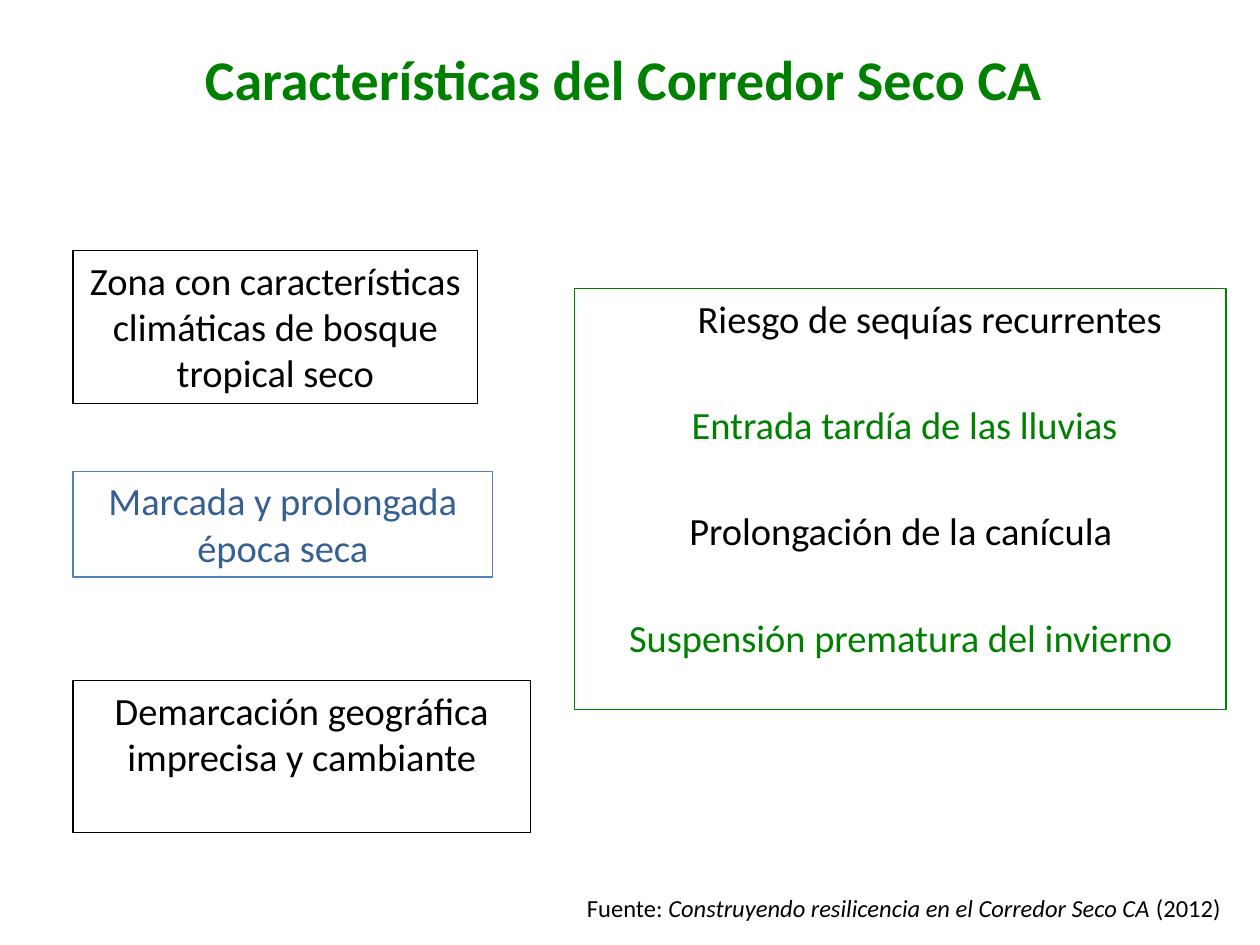
from pptx import Presentation
from pptx.dml.color import RGBColor
from pptx.enum.text import MSO_ANCHOR, PP_ALIGN
from pptx.util import Inches, Pt

CENTER, LEFT = PP_ALIGN.CENTER, PP_ALIGN.LEFT
TOP, MIDDLE = MSO_ANCHOR.TOP, MSO_ANCHOR.MIDDLE

THEME = {
    "font": "Calibri",
    "black": RGBColor(0x00, 0x00, 0x00),
    "green": RGBColor(0x00, 0x80, 0x00),
    "blue": RGBColor(0x37, 0x60, 0x92),
    "blue_line": RGBColor(0x4F, 0x81, 0xBD),
    "title_size": Pt(32),
    "body_size": Pt(22),
    "source_size": Pt(14),
    "line_width": Pt(0.75),
}


def add_run(paragraph, text, size, color, **formats):
    run = paragraph.add_run()
    run.text = text
    run.font.color.rgb = THEME[color]
    for name, value in {"name": THEME["font"], "size": THEME[size], **formats}.items():
        setattr(run.font, name, value)


def add_text_box(left, top, width, height, line_color=None, wrap=True):
    box = slide.shapes.add_textbox(Inches(left), Inches(top), Inches(width), Inches(height))
    for name, value in {"word_wrap": wrap, "vertical_anchor": TOP}.items():
        setattr(box.text_frame, name, value)
    if line_color:
        box.line.color.rgb = THEME[line_color]
        box.line.width = THEME["line_width"]
    return box.text_frame


presentation = Presentation()
presentation.slide_width = Inches(10)
presentation.slide_height = Inches(7.5)
slide = presentation.slides.add_slide(presentation.slide_layouts[5])

# Title
title = slide.shapes.title
title_place = {"left": 0.5, "top": 0.3, "width": 9, "height": 0.64}
for name, value in title_place.items():
    setattr(title, name, Inches(value))
title.text_frame.vertical_anchor = MIDDLE
paragraph = title.text_frame.paragraphs[0]
paragraph.alignment = CENTER
add_run(paragraph, "Características del Corredor Seco CA ", "title_size", "green", bold=True)

# Climate risks: text, colour, left indent in inches
risks = [
    ("Riesgo de sequías recurrentes", "black", 0.47),
    ("Entrada tardía de las lluvias", "green", 0.07),
    ("Prolongación de la canícula", "black", 0.01),
    ("Suspensión prematura del invierno", "green", 0.01),
]
risk_format = {"alignment": CENTER, "space_before": Pt(4.4), "space_after": Pt(30)}
risk_frame = add_text_box(4.56, 2.29, 5.17, 3.34, "green")
for index, (text, color, indent) in enumerate(risks):
    paragraph = risk_frame.add_paragraph() if index else risk_frame.paragraphs[0]
    for name, value in risk_format.items():
        setattr(paragraph, name, value)
    paragraph._p.get_or_add_pPr().set("marL", str(Inches(indent)))
    add_run(paragraph, text, "body_size", color)

# Source line
source_frame = add_text_box(4.56, 7.04, 5.31, 0.34, wrap=False)
paragraph = source_frame.paragraphs[0]
paragraph.alignment = LEFT
source_parts = [
    ("Fuente: ", False),
    ("Construyendo resilicencia en el Corredor Seco CA ", True),
    ("(2012)", False),
]
for text, italic in source_parts:
    add_run(paragraph, text, "source_size", "black", italic=italic)

# Zone features: top, width, height, line colour, text colour, text
features = [
    (1.99, 3.21, 1.21, "black", "black",
     "Zona con características climáticas de bosque tropical seco"),
    (3.74, 3.33, 0.84, "blue_line", "blue", "Marcada y prolongada época seca"),
    (5.4, 3.63, 1.21, "black", "black", "Demarcación geográfica imprecisa y cambiante"),
]
for top, width, height, line_color, color, text in features:
    paragraph = add_text_box(0.58, top, width, height, line_color).paragraphs[0]
    paragraph.alignment = CENTER
    add_run(paragraph, text, "body_size", color)

presentation.save("out.pptx")
